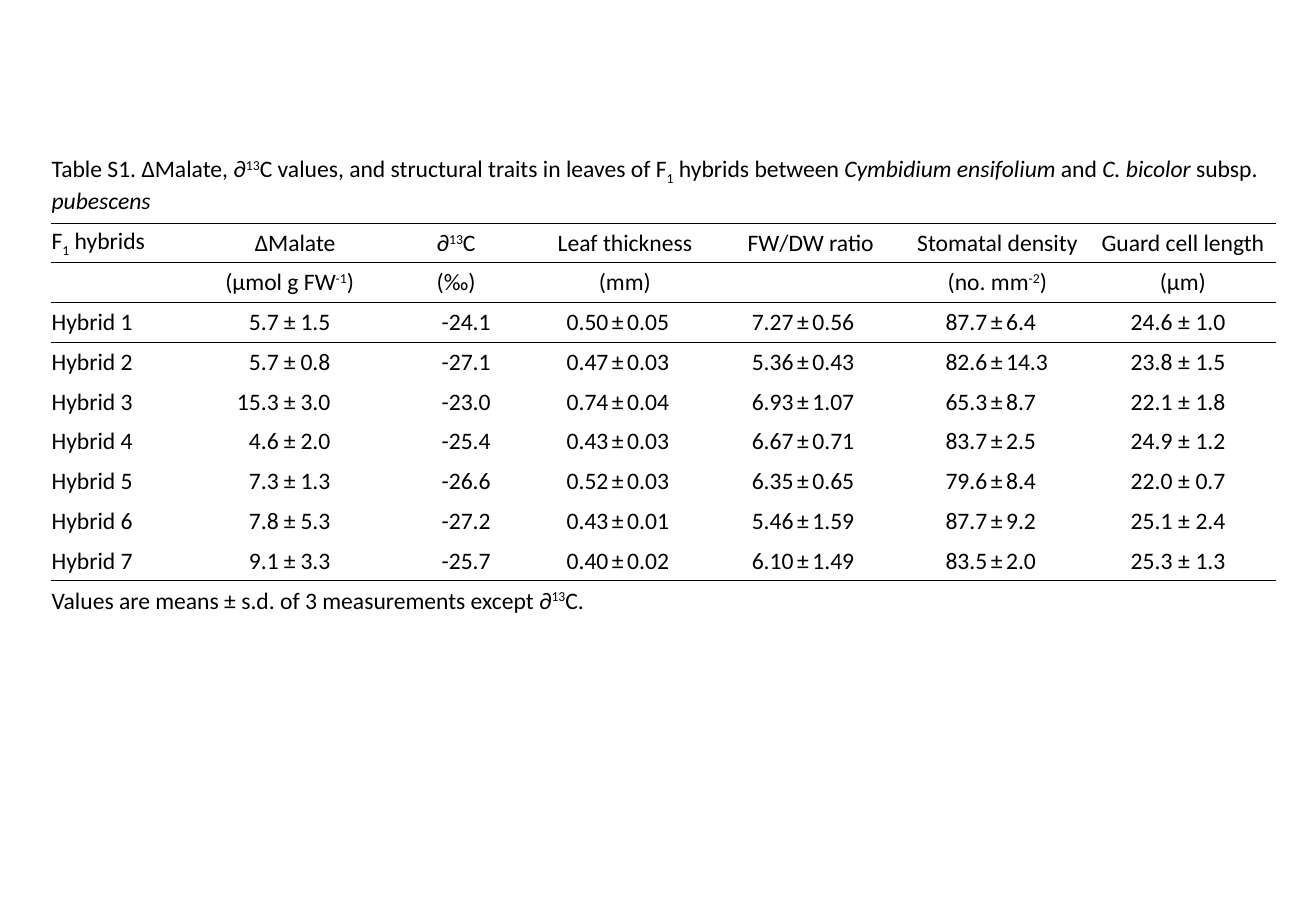
"""Build the supplementary table of leaf traits in orchid hybrids."""
from lxml import etree
from pptx import Presentation, util as u
from pptx.dml.color import RGBColor
from pptx.enum import text
from pptx.oxml.ns import qn

THEME = {"font": "Calibri", "size": 28, "ink": "000000", "rule": 1, "inset": 0.01}
BASELINES = {"super": "30000", "sub": "-25000"}
LEFT, CENTER, RIGHT = text.PP_ALIGN.LEFT, text.PP_ALIGN.CENTER, text.PP_ALIGN.RIGHT

CAPTION = [
    ("Table S1. ΔMalate, ∂", ""), ("13", "super"),
    ("C values, and structural traits in leaves of F", ""), ("1", "sub"),
    (" hybrids between ", ""), ("Cymbidium ensifolium ", "italic"), ("and ", ""),
    ("C. bicolor ", "italic"), ("subsp. ", ""), ("pubescens", "italic"),
]
ROW_TITLE = [("F", ""), ("1", "sub"), (" hybrids", "")]
HEADINGS = [
    ([("ΔMalate", "")], [("(µmol g FW", ""), ("-1", "super"), (")", "")]),
    ([("∂", ""), ("13", "super"), ("C", "")], [("(‰)", "")]),
    ([("Leaf thickness", "")], [("(mm)", "")]),
    ([("FW/DW ratio", "")], []),
    ([("Stomatal density", "")], [("(no. mm", ""), ("-2", "super"), (")", "")]),
    ([("Guard cell length", "")], [("(µm)", "")]),
]
HYBRIDS = [
    ("Hybrid 1", "5.7 ± 1.5", "-24.1", "0.50 ± 0.05", "7.27 ± 0.56", "87.7 ± 6.4", "24.6 ± 1.0"),
    ("Hybrid 2", "5.7 ± 0.8", "-27.1", "0.47 ± 0.03", "5.36 ± 0.43", "82.6 ± 14.3", "23.8 ± 1.5"),
    ("Hybrid 3", "15.3 ± 3.0", "-23.0", "0.74 ± 0.04", "6.93 ± 1.07", "65.3 ± 8.7", "22.1 ± 1.8"),
    ("Hybrid 4", "4.6 ± 2.0", "-25.4", "0.43 ± 0.03", "6.67 ± 0.71", "83.7 ± 2.5", "24.9 ± 1.2"),
    ("Hybrid 5", "7.3 ± 1.3", "-26.6", "0.52 ± 0.03", "6.35 ± 0.65", "79.6 ± 8.4", "22.0 ± 0.7"),
    ("Hybrid 6", "7.8 ± 5.3", "-27.2", "0.43 ± 0.01", "5.46 ± 1.59", "87.7 ± 9.2", "25.1 ± 2.4"),
    ("Hybrid 7", "9.1 ± 3.3", "-25.7", "0.40 ± 0.02", "6.10 ± 1.49", "83.5 ± 2.0", "25.3 ± 1.3"),
]
FOOTNOTE = [("Values are means ± s.d. of 3 measurements except ∂", ""), ("13", "super"), ("C.", "")]

COLUMN_WIDTHS = [2.47, 1.29, 0.34, 1.29, 0.25, 1.61, 0.7, 1.24, 0.29, 1.47,
                 1.29, 0.29, 1.54, 1.36, 0.29, 1.38, 1.38, 0.36, 1.34]
CAPTION_HEIGHT, ROW_HEIGHT = 1.25, 0.655
GROUP_SPAN = 3
RULED_ROWS = {0, 1, 2, 3, 9}
MALATE_INDENT = 0.19


def write(cell, pieces, align=LEFT):
    para = cell.text_frame.paragraphs[0]
    para.alignment = align
    for words, style in pieces:
        span = para.add_run()
        span.text = words
        span.font.name = THEME["font"]
        span.font.size = u.Pt(THEME["size"])
        span.font.color.rgb = RGBColor.from_string(THEME["ink"])
        span.font.italic = style == "italic"
        if style in BASELINES:
            span._r.get_or_add_rPr().set("baseline", BASELINES[style])


def set_borders(cell, above, below):
    properties = cell._tc.get_or_add_tcPr()
    sides = [("a:lnL", False), ("a:lnR", False), ("a:lnT", above), ("a:lnB", below)]
    for position, (tag, ruled) in enumerate(sides):
        line = etree.Element(qn(tag), w=str(u.Pt(THEME["rule"])))
        if ruled:
            fill = etree.SubElement(line, qn("a:solidFill"))
            etree.SubElement(fill, qn("a:srgbClr"), val=THEME["ink"])
        else:
            etree.SubElement(line, qn("a:noFill"))
        properties.insert(position, line)


def format_cells(table):
    for row_index, row in enumerate(table.rows):
        for cell in row.cells:
            cell.margin_left = cell.margin_right = cell.margin_top = u.Inches(THEME["inset"])
            cell.margin_bottom = 0
            cell.vertical_anchor = text.MSO_ANCHOR.MIDDLE
            cell.fill.background()
            set_borders(cell, row_index - 1 in RULED_ROWS, row_index in RULED_ROWS)


def fill_headings(table):
    write(table.cell(1, 0), ROW_TITLE)
    for group, lines in enumerate(HEADINGS):
        first = 1 + group * GROUP_SPAN
        for row, pieces in enumerate(lines, start=1):
            if pieces:
                cell = table.cell(row, first)
                cell.merge(table.cell(row, first + GROUP_SPAN - 1))
                write(cell, pieces, CENTER)
    table.cell(1, 1).margin_left = u.Inches(MALATE_INDENT)


def fill_hybrids(table):
    for row, (name, *values) in enumerate(HYBRIDS, start=3):
        write(table.cell(row, 0), [(name, "")])
        for group, value in enumerate(values):
            first = 1 + group * GROUP_SPAN
            parts = value.split()
            if len(parts) == 1:
                write(table.cell(row, first + 1), [(value, "")], RIGHT)
                continue
            for offset, (part, align) in enumerate(zip(parts, (RIGHT, CENTER, LEFT))):
                write(table.cell(row, first + offset), [(part, "")], align)


def main():
    deck = Presentation()
    deck.slide_width, deck.slide_height = u.Inches(21.67), u.Inches(15)
    page = deck.slides.add_slide(deck.slide_layouts[6])
    heights = [CAPTION_HEIGHT] + [ROW_HEIGHT] * (len(HYBRIDS) + 3)
    table = page.shapes.add_table(
        len(heights), len(COLUMN_WIDTHS), u.Inches(0.84), u.Inches(2.42),
        u.Inches(sum(COLUMN_WIDTHS)), u.Inches(sum(heights))).table
    table.first_row = table.horz_banding = False
    for column, width in zip(table.columns, COLUMN_WIDTHS):
        column.width = u.Inches(width)
    for row, height in zip(table.rows, heights):
        row.height = u.Inches(height)
    format_cells(table)
    last_column = len(COLUMN_WIDTHS) - 1
    for row, pieces in ((0, CAPTION), (len(heights) - 1, FOOTNOTE)):
        table.cell(row, 0).merge(table.cell(row, last_column))
        write(table.cell(row, 0), pieces)
    fill_headings(table)
    fill_hybrids(table)
    deck.save("out.pptx")


if __name__ == "__main__":
    main()
